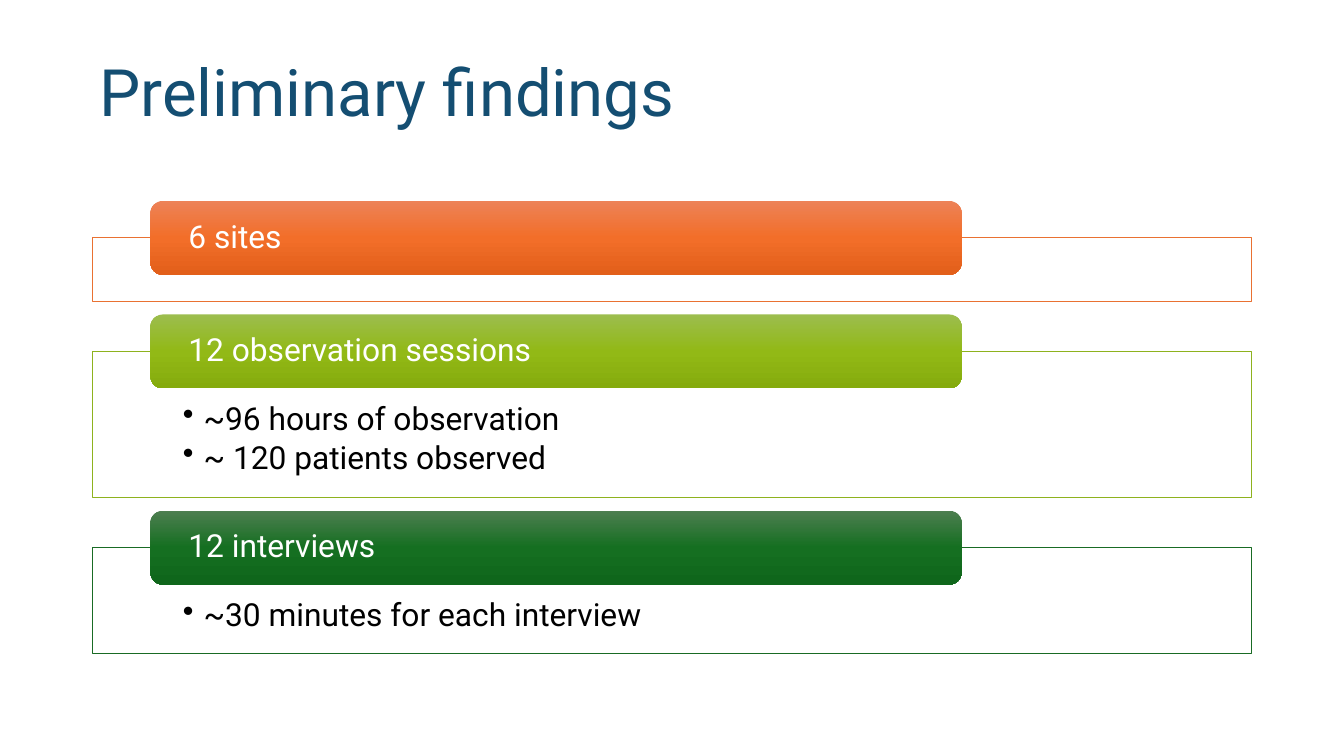
from dataclasses import dataclass

from lxml import etree
from pptx import Presentation
from pptx import util as u
from pptx.dml import color as c
from pptx.enum import shapes, text
from pptx.oxml import ns


@dataclass(frozen=True)
class Theme:
    font: str = "Roboto"
    title: int = 70
    body: int = 34
    navy: str = "144E72"
    white: str = "FFFFFF"
    black: str = "000000"
    orange: tuple = ("E97132", "ED8257", "F26E29", "E25F1A")
    lime: tuple = ("8EB21E", "9CBD4E", "92B916", "85AB0D")
    green: tuple = ("196B24", "4D7E50", "156F21", "0F661B")


def add(node, tag, **attrs):
    return etree.SubElement(node, ns.qn(tag), attrs)


def assign(item, style):
    for key, value in style.items():
        setattr(item, key, value)


class Deck:
    def __init__(self, theme):
        self.theme = theme
        self.file = Presentation()
        self.file.slide_width = u.Inches(20)
        self.file.slide_height = u.Inches(11.25)
        self.slide = self.file.slides.add_slide(self.file.slide_layouts[5])

    def label(self, shape, lines, size, color, anchor, pad, after=0, bullet=False):
        frame = shape.text_frame
        left, top, right, base = map(u.Inches, pad)
        assign(frame, {
            "word_wrap": True, "auto_size": text.MSO_AUTO_SIZE.NONE,
            "vertical_anchor": anchor, "margin_left": left,
            "margin_top": top, "margin_right": right, "margin_bottom": base,
        })
        frame.text = "\n".join(lines)
        for para in frame.paragraphs:
            assign(para, {
                "alignment": text.PP_ALIGN.LEFT, "line_spacing": 0.9,
                "space_before": u.Pt(0), "space_after": u.Pt(after),
            })
            if bullet:
                props = para._p.get_or_add_pPr()
                props.set("marL", str(u.Inches(0.31)))
                props.set("indent", str(-u.Inches(0.31)))
                add(props, "a:buChar", char="•")
            for run in para.runs:
                assign(run.font, {"name": self.theme.font, "size": u.Pt(size)})
                run.font.color.rgb = c.RGBColor.from_string(color)

    def shape(self, kind, box):
        item = self.slide.shapes.add_shape(kind, *map(u.Inches, box))
        item.shadow.inherit = False
        return item

    def title(self, words, box):
        item = self.slide.shapes.title
        item.left, item.top, item.width, item.height = map(u.Inches, box)
        self.label(item, [words], self.theme.title, self.theme.navy,
                   text.MSO_ANCHOR.MIDDLE, (0.1, 0.05, 0.1, 0.05))

    def panel(self, lines, box, color):
        item = self.shape(shapes.MSO_SHAPE.RECTANGLE, box)
        item.fill.solid()
        item.fill.fore_color.rgb = c.RGBColor.from_string(self.theme.white)
        fill = item._element.spPr.find(ns.qn("a:solidFill"))
        add(fill[0], "a:alpha", val="90000")
        item.line.color.rgb = c.RGBColor.from_string(color)
        item.line.width = u.Pt(1)
        if lines:
            self.label(item, lines, self.theme.body, self.theme.black,
                       text.MSO_ANCHOR.TOP, (1.34, 0.77, 1.34, 0.26), 5, True)

    def bar(self, words, box, tones):
        item = self.shape(shapes.MSO_SHAPE.ROUNDED_RECTANGLE, box)
        item.line.fill.background()
        item.fill.gradient()
        grad = item._element.spPr.find(ns.qn("a:gradFill"))
        for child in list(grad):
            grad.remove(child)
        stops = add(grad, "a:gsLst")
        for spot, tone in zip((0, 50000, 100000), tones):
            add(add(stops, "a:gs", pos=str(spot)), "a:srgbClr", val=tone)
        add(grad, "a:lin", ang="5400000", scaled="0")
        self.label(item, [words], self.theme.body, self.theme.white,
                   text.MSO_ANCHOR.MIDDLE, (0.51, 0, 0.51, 0))


def main():
    theme = Theme()
    deck = Deck(theme)
    left, width = 1.38, 17.25
    deck.title("Preliminary findings", (left, 0.47, width, 1.91))

    groups = [
        ("6 sites", [], 0.94, theme.orange),
        ("12 observation sessions",
         ["~96 hours of observation", "~ 120 patients observed"], 2.17, theme.lime),
        ("12 interviews", ["~30 minutes for each interview"], 1.58, theme.green),
    ]
    top, gap = 3.54, 0.75
    for head, lines, height, (edge, *tones) in groups:
        deck.panel(lines, (left, top, width, height), edge)
        deck.bar(head, (2.24, top - 0.55, 12.07, 1.1), tones)
        top += height + gap

    deck.file.save("out.pptx")


if __name__ == "__main__":
    main()
